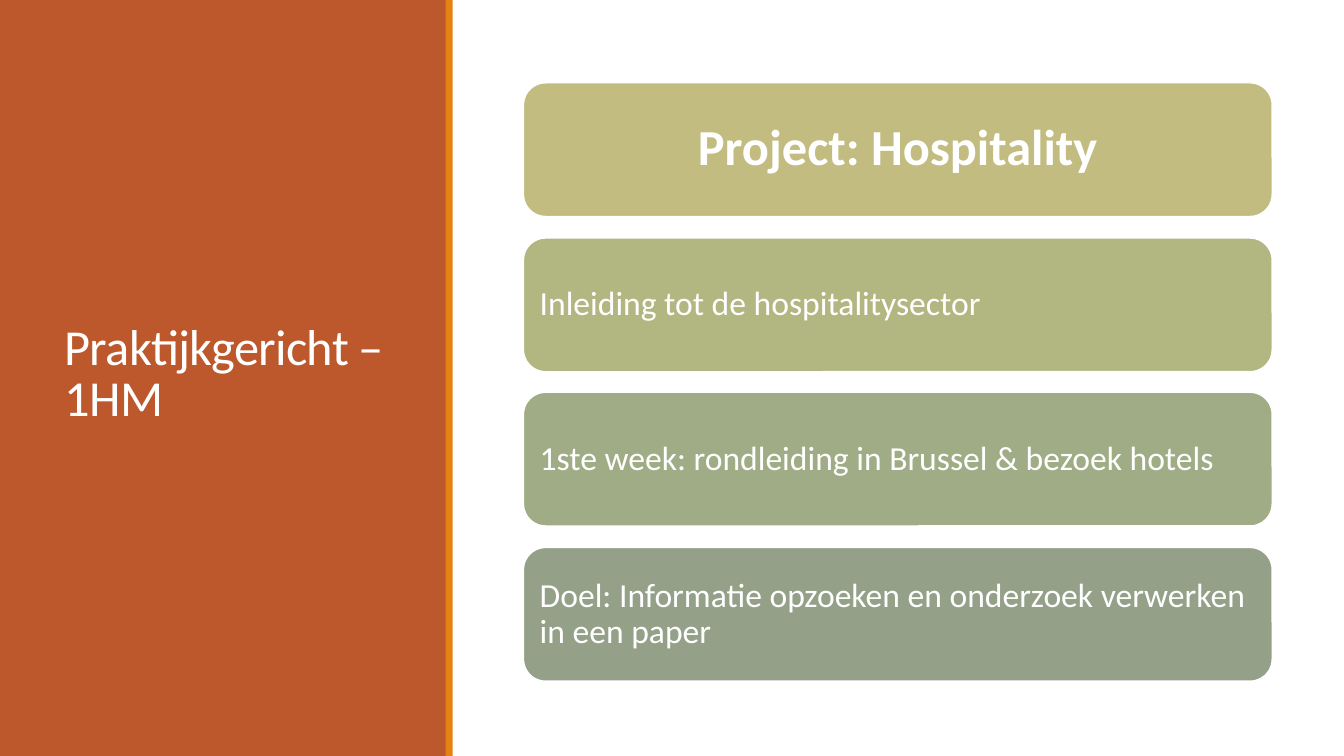
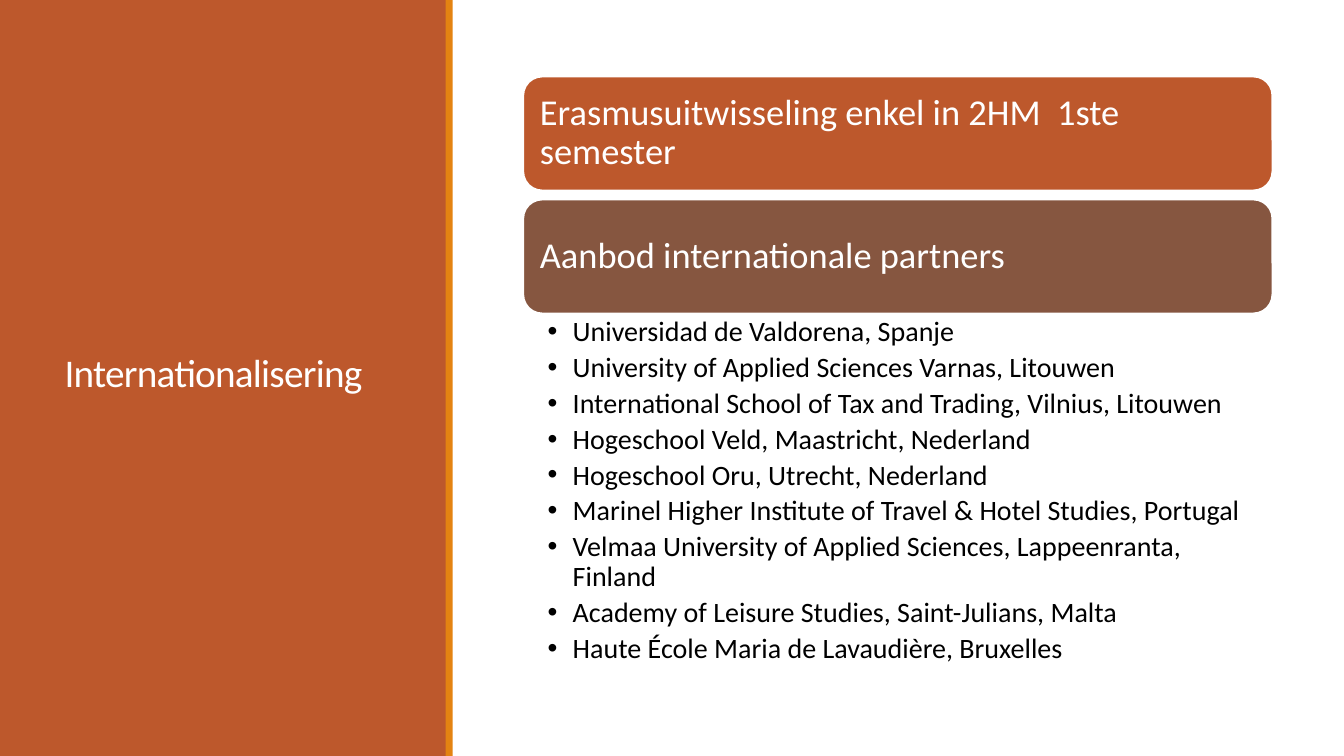
from dataclasses import dataclass

import pptx
import pptx.dml.color
import pptx.enum.shapes
import pptx.enum.text
import pptx.oxml.ns
import pptx.util

ALIGN = pptx.enum.text.PP_ALIGN
FORM = pptx.enum.shapes.MSO_SHAPE


@dataclass(frozen=True)
class Theme:
    font: str = "Calibri"
    white: str = "FFFFFF"
    black: str = "000000"
    rust: str = "BD582C"
    amber: str = "E48312"
    sand: str = "C2BC80"
    moss: str = "B2B782"
    sage: str = "A0AC85"
    slate: str = "94A088"
    brown: str = "865640"
    large: int = 36
    small: int = 28
    lead: int = 26
    text: int = 24
    item: int = 20
    edge: float = 1.25


@dataclass(frozen=True)
class Box:
    left: int
    top: int
    width: int
    height: int


@dataclass(frozen=True)
class Card:
    text: str
    fill: str
    size: int
    bold: bool = False
    align: ALIGN = ALIGN.LEFT


@dataclass(frozen=True)
class Stack:
    """Equal cards spread evenly between the first and the last top."""
    first: int
    last: int
    height: int
    pad: int
    cards: tuple[Card, ...]


THEME = Theme()
WIDE, HIGH = 1333, 750
PANEL = Box(0, 0, 443, HIGH)
STRIPE = Box(442, 0, 7, HIGH)
TITLE = Box(54, 57, 337, 631)
LIST = Box(519, 311, 743, 371)
CARD_X, CARD_W = 519, 743

PROJECT = Stack(82, 543, 133, 10, (
    Card("Project: Hospitality", THEME.sand, THEME.large, True, ALIGN.CENTER),
    Card("Inleiding tot de hospitalitysector", THEME.moss, THEME.text),
    Card("1ste week: rondleiding in Brussel & bezoek hotels",
         THEME.sage, THEME.text),
    Card("Doel: Informatie opzoeken en onderzoek verwerken in een paper",
         THEME.slate, THEME.text),
))
ABROAD = Stack(76, 198, 113, 11, (
    Card("Erasmusuitwisseling enkel in 2HM  1ste semester",
         THEME.rust, THEME.lead),
    Card("Aanbod internationale partners", THEME.brown, THEME.lead),
))
PARTNERS = (
    "Universidad de Valdorena, Spanje",
    "University of Applied Sciences Varnas, Litouwen",
    "International School of Tax and Trading, Vilnius, Litouwen",
    "Hogeschool Veld, Maastricht, Nederland",
    "Hogeschool Oru, Utrecht, Nederland",
    "Marinel Higher Institute of Travel & Hotel Studies, Portugal",
    "Velmaa University of Applied Sciences, Lappeenranta, Finland",
    "Academy of Leisure Studies, Saint-Julians, Malta",
    "Haute École Maria de Lavaudière, Bruxelles",
)


def px(count: int) -> pptx.util.Emu:
    """Turn px, 100 to the inch, into EMU."""
    return pptx.util.Emu(count * 9144)


def rgb(code: str) -> pptx.dml.color.RGBColor:
    return pptx.dml.color.RGBColor.from_string(code)


def place(shape, box: Box) -> None:
    shape.left, shape.top = px(box.left), px(box.top)
    shape.width, shape.height = px(box.width), px(box.height)


def inset(frame, left: int, top: int, right: int, bottom: int) -> None:
    frame.margin_left, frame.margin_top = px(left), px(top)
    frame.margin_right, frame.margin_bottom = px(right), px(bottom)


def style(para, size: int, color: str, lines: float,
          align: ALIGN = ALIGN.LEFT, bold: bool = False) -> None:
    para.alignment = align
    para.line_spacing = lines
    para.font.name = THEME.font
    para.font.size = pptx.util.Pt(size)
    para.font.bold = bold
    para.font.color.rgb = rgb(color)


def block(slide, form: FORM, box: Box, fill: str):
    """Add a filled shape without shadow or line."""
    shape = slide.shapes.add_shape(
        form, px(box.left), px(box.top), px(box.width), px(box.height))
    shape.shadow.inherit = False
    shape.fill.solid()
    shape.fill.fore_color.rgb = rgb(fill)
    shape.line.fill.background()
    return shape


def dress(deck, slide) -> None:
    """Give the master the side panel and stripe, drawn by way of a slide."""
    tree = deck.slide_master.shapes.element
    bands = ((PANEL, THEME.rust), (STRIPE, THEME.amber))
    for spot, (box, fill) in enumerate(bands):
        band = block(slide, FORM.RECTANGLE, box, fill).element
        band.nvSpPr.cNvPr.set("id", str(20 + spot))
        tree.insert(2 + spot, band)


def head(slide, text: str, size: int) -> None:
    title = slide.shapes.title
    place(title, TITLE)
    frame = title.text_frame
    frame.text = text
    frame.word_wrap = True
    frame.auto_size = pptx.enum.text.MSO_AUTO_SIZE.NONE
    frame.vertical_anchor = pptx.enum.text.MSO_ANCHOR.MIDDLE
    para = frame.paragraphs[0]
    style(para, size, THEME.white, 0.85)
    para._p.pPr.find(pptx.oxml.ns.qn("a:defRPr")).set("spc", "-50")


def pile(slide, stack: Stack) -> None:
    """Draw the cards of a stack."""
    step = (stack.last - stack.first) / (len(stack.cards) - 1)
    for row, card in enumerate(stack.cards):
        top = stack.first + round(row * step)
        box = Box(CARD_X, top, CARD_W, stack.height)
        shape = block(slide, FORM.ROUNDED_RECTANGLE, box, card.fill)
        shape.line.color.rgb = rgb(THEME.white)
        shape.line.width = pptx.util.Pt(THEME.edge)
        frame = shape.text_frame
        frame.text = card.text
        frame.word_wrap = True
        frame.vertical_anchor = pptx.enum.text.MSO_ANCHOR.MIDDLE
        inset(frame, *[stack.pad] * 4)
        style(frame.paragraphs[0], card.size, THEME.white, 0.9,
              card.align, card.bold)


def bullets(slide, items: tuple[str, ...]) -> None:
    body = slide.placeholders[1]
    place(body, LIST)
    frame = body.text_frame
    frame.text = "\n".join(items)
    frame.word_wrap = True
    frame.auto_size = pptx.enum.text.MSO_AUTO_SIZE.NONE
    inset(frame, 24, 4, 20, 4)
    for para in frame.paragraphs:
        style(para, THEME.item, THEME.black, 0.9)
        para.space_before = pptx.util.Pt(0)
        para.space_after = pptx.util.Pt(4)
        para._p.pPr.set("marL", str(px(25)))
        para._p.pPr.set("indent", str(px(-25)))


def main() -> None:
    deck = pptx.Presentation()
    deck.slide_width, deck.slide_height = px(WIDE), px(HIGH)
    listed, plain = deck.slide_layouts[1], deck.slide_layouts[5]

    project = deck.slides.add_slide(plain)
    dress(deck, project)
    head(project, "Praktijkgericht – 1HM", THEME.large)
    pile(project, PROJECT)

    abroad = deck.slides.add_slide(listed)
    head(abroad, "Internationalisering", THEME.small)
    pile(abroad, ABROAD)
    bullets(abroad, PARTNERS)

    deck.save("out.pptx")


if __name__ == "__main__":
    main()
